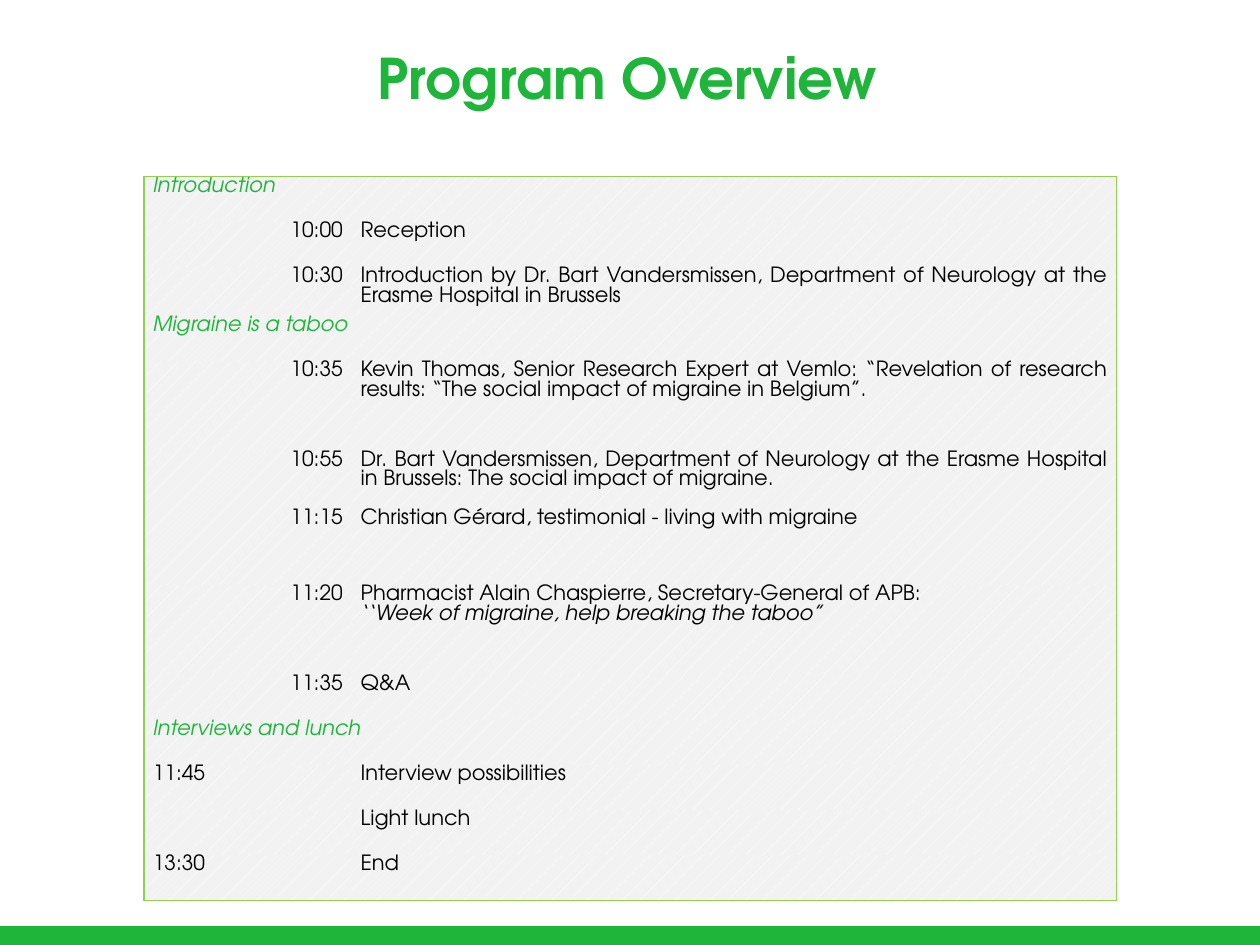
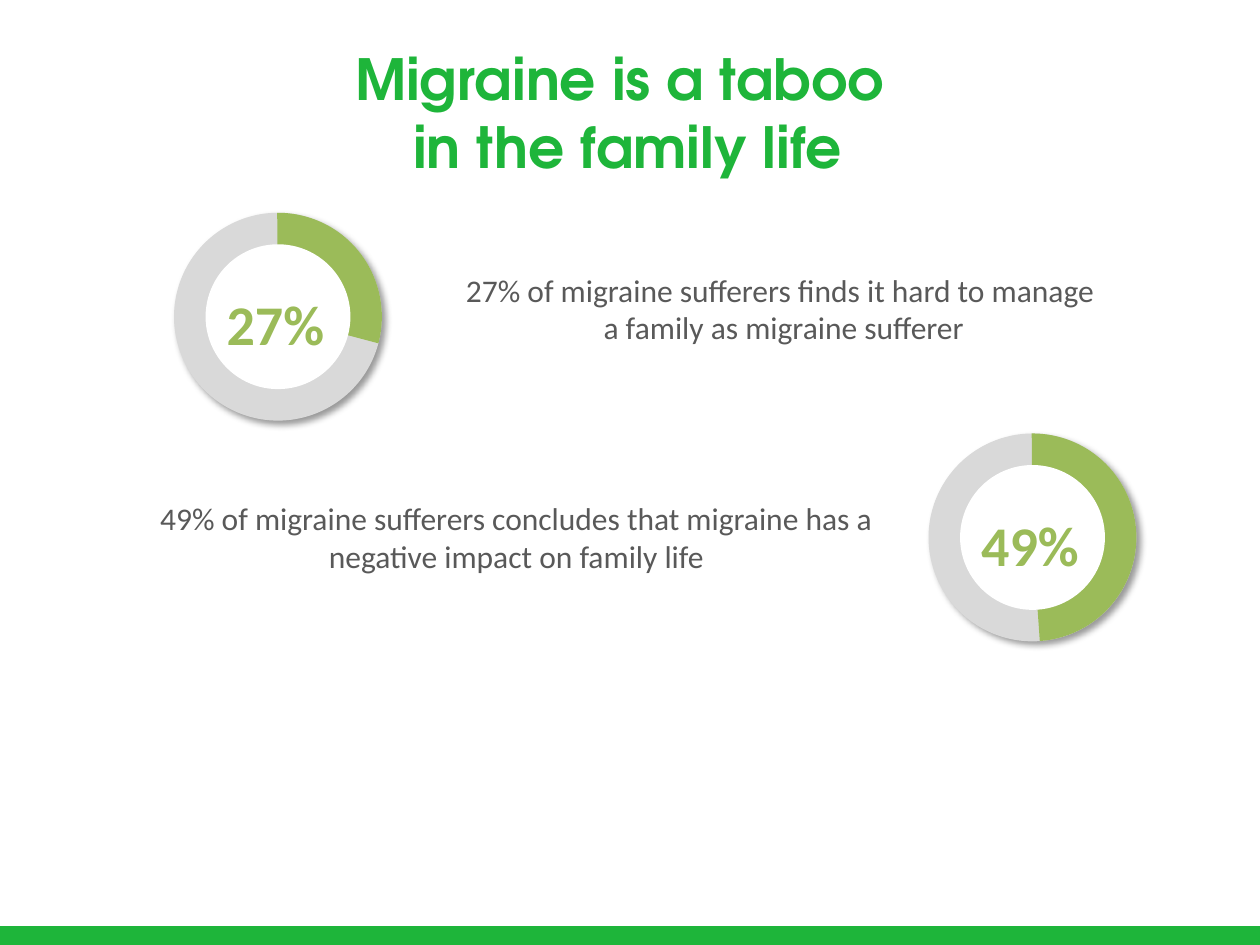
from lxml import etree
from pptx import Presentation
from pptx import util as u
from pptx.dml.color import RGBColor
from pptx.enum import dml, shapes, text
from pptx.oxml import ns
from pptx.util import Cm, Pt

COLORS = {
    "brand": "1EB53A", "border": "92D050", "cell": "F2F2F2", "white": "FFFFFF",
    "black": "000000", "ring": "D9D9D9", "share": "9BBB59", "caption": "595959",
}
HEADING_FONT = "TeX Gyre Adventor"
BODY_FONT = "Calibri"
SLIDE_SIZE = Cm(25.4), Cm(19.05)
CENTER, RIGHT, JUSTIFY = (text.PP_ALIGN.CENTER, text.PP_ALIGN.RIGHT,
                          text.PP_ALIGN.JUSTIFY)
LINE_HEIGHT = 11.2  # points, in the agenda
ROW_HEIGHT = 0.91   # centimetres, in the agenda

# Agenda rows: height, time entries, topic entries.
# An entry is (wording, blank lines before it, italic); a heading has no topics.
AGENDA = [
    (ROW_HEIGHT, "Introduction", None),
    (ROW_HEIGHT, [("10:00", 0, False)], [("Reception", 0, False)]),
    (0.99, [("10:30", 0, False)],
     [("Introduction by Dr. Bart Vandersmissen, Department of Neurology at the "
       "Erasme Hospital in Brussels", 0, False)]),
    (ROW_HEIGHT, "Migraine is a taboo", None),
    (1.8, [("10:35", 0, False)],
     [("Kevin Thomas, Senior Research Expert at Vemlo: “Revelation of research "
       "results: “The social impact of migraine in Belgium”.", 0, False)]),
    (2.72, [("10:55", 0, False), ("11:15", 2, False)],
     [("Dr. Bart Vandersmissen, Department of Neurology at the Erasme Hospital "
       "in Brussels: The social impact of migraine.", 0, False),
      ("Christian Gérard, testimonial - living with migraine", 1, False)]),
    (1.8, [("11:20", 0, False)],
     [("Pharmacist Alain Chaspierre, Secretary-General of APB:", 0, False),
      ("‘‘Week of migraine, help breaking the taboo”", 0, True)]),
    (ROW_HEIGHT, [("11:35", 0, False)], [("Q&A", 0, False)]),
    (ROW_HEIGHT, "Interviews and lunch", None),
    (ROW_HEIGHT, [("11:45", 0, False)], [("Interview possibilities", 0, False)]),
    (ROW_HEIGHT, [], [("Light lunch", 0, False)]),
    (ROW_HEIGHT, [("13:30", 0, False)], [("End", 0, False)]),
]
FIRST_LEFT_ALIGNED_ROW = 9


def rgb(name):
    return RGBColor.from_string(COLORS[name])


def add_xml(parent, tag, **attributes):
    return etree.SubElement(parent, ns.qn(tag), attributes)


def style_run(run, font_name, size, color, bold=False, italic=False):
    font = run.font
    font.name, font.size = font_name, Pt(size)
    font.bold, font.italic = bold, italic
    font.color.rgb = rgb(color)


def add_text(slide, box, wording, font_name, size, color, bold=False):
    shape = slide.shapes.add_textbox(*map(Cm, box))
    frame = shape.text_frame
    frame.word_wrap = True
    frame.text = wording
    paragraph = frame.paragraphs[0]
    paragraph.alignment = CENTER
    for run in paragraph.runs:
        style_run(run, font_name, size, color, bold)
    return frame


def add_filled(slide, kind, box, color):
    shape = slide.shapes.add_shape(kind, *map(Cm, box))
    shape.shadow.inherit = False
    shape.fill.solid()
    shape.fill.fore_color.rgb = rgb(color)
    shape.line.fill.background()
    return shape


# Shared frame: footer band and title
def add_framed_slide(presentation, title, title_size):
    slide = presentation.slides.add_slide(presentation.slide_layouts[6])
    add_filled(slide, shapes.MSO_SHAPE.RECTANGLE, (0, 18.67, 25.4, 0.38), "brand")
    add_text(slide, (3.61, 0.76, 18.08, 3.18), title,
             HEADING_FONT, title_size, "brand", bold=True)
    return slide


# Agenda table
def set_borders(cell, outer_edges):
    properties = cell._tc.get_or_add_tcPr()
    for edge in "LRTB":
        line = add_xml(properties, f"a:ln{edge}", w=str(u.Pt(1)))
        if edge in outer_edges:
            fill = add_xml(line, "a:solidFill")
            add_xml(fill, "a:srgbClr", val=COLORS["border"])
        else:
            add_xml(line, "a:noFill")


def fill_cell(cell, entries, alignment, color="black"):
    cell.margin_left = cell.margin_right = Cm(0.18)
    cell.margin_top = cell.margin_bottom = 0
    cell.fill.patterned()
    cell.fill.pattern = dml.MSO_PATTERN.PERCENT_5
    cell.fill.fore_color.rgb = rgb("white")
    cell.fill.back_color.rgb = rgb("cell")
    frame = cell.text_frame
    for index, (wording, blank_lines, italic) in enumerate(entries):
        paragraph = frame.add_paragraph() if index else frame.paragraphs[0]
        paragraph.text = wording
        paragraph.alignment = alignment
        paragraph.line_spacing = Pt(LINE_HEIGHT)
        if blank_lines:
            paragraph.space_before = Pt(blank_lines * LINE_HEIGHT)
        style_run(paragraph.runs[0], HEADING_FONT, 12, color, italic=italic)


def add_agenda(slide, left, top, column_widths):
    height = sum(row[0] for row in AGENDA)
    table = slide.shapes.add_table(
        len(AGENDA), 2, Cm(left), Cm(top),
        Cm(sum(column_widths)), Cm(height)).table
    table.first_row = table.horz_banding = False
    for column, width in zip(table.columns, column_widths):
        column.width = Cm(width)

    for index, (row_height, times, topics) in enumerate(AGENDA):
        table.rows[index].height = Cm(row_height)
        time_cell, topic_cell = table.cell(index, 0), table.cell(index, 1)
        is_heading = topics is None
        edges = "T" * (index == 0) + "B" * (index == len(AGENDA) - 1)
        set_borders(time_cell, edges + ("LR" if is_heading else "L"))
        set_borders(topic_cell, edges + "R")
        if is_heading:
            time_cell.merge(topic_cell)
            fill_cell(time_cell, [(times, 0, True)], JUSTIFY, "brand")
            continue
        time_alignment = RIGHT if index < FIRST_LEFT_ALIGNED_ROW else JUSTIFY
        fill_cell(time_cell, times, time_alignment)
        fill_cell(topic_cell, topics, JUSTIFY)


# Ring gauge with its percentage in the middle
def add_ring_shadow(shape):
    effects = shape._element.spPr.find(ns.qn("a:effectLst"))
    shadow = add_xml(effects, "a:outerShdw", blurRad=str(Pt(4)), dist=str(Pt(3)),
                     dir=str(45 * 60000), algn="tl", rotWithShape="0")
    color = add_xml(shadow, "a:srgbClr", val=COLORS["black"])
    add_xml(color, "a:alpha", val="40000")


def add_gauge(slide, left, top, percentage, end_angle):
    size, thickness, hole_inset = 4.19, 0.172, 0.635
    box = left, top, size, size
    ring = add_filled(slide, shapes.MSO_SHAPE.DONUT, box, "ring")
    ring.adjustments[0] = thickness
    add_ring_shadow(ring)

    arc = add_filled(slide, shapes.MSO_SHAPE.BLOCK_ARC, box, "share")
    # Angles are stored in 60000ths of a degree, adjustments in 100000ths
    for index, angle in enumerate((end_angle, 270.41)):
        arc.adjustments[index] = angle * 0.6
    arc.adjustments[2] = thickness
    for shape in (ring, arc):
        shape._element.spPr.xfrm.set("flipH", "1")

    hole_size = size - 2 * hole_inset
    add_filled(slide, shapes.MSO_SHAPE.OVAL,
               (left + hole_inset, top + hole_inset, hole_size, hole_size), "white")
    frame = add_text(slide, (left + 0.79, top + 1.45, 2.51, 1.35), percentage,
                     BODY_FONT, 32, "share", bold=True)
    frame.margin_left = frame.margin_right = frame.margin_bottom = 0
    frame.margin_top = Cm(0.1)


def add_caption(slide, left, top, wording):
    frame = add_text(slide, (left, top, 16.2, 1.8), wording,
                     BODY_FONT, 18, "caption")
    frame.auto_size = text.MSO_AUTO_SIZE.SHAPE_TO_FIT_TEXT


def build_program_slide(presentation):
    slide = add_framed_slide(presentation, "Program Overview", 32)
    add_agenda(slide, 2.9, 3.56, (4.19, 15.42))


def build_family_slide(presentation):
    slide = add_framed_slide(
        presentation, "Migraine is a taboo \vin the family life", 32.4)
    add_gauge(slide, 3.51, 4.29, "27%", 165.14)
    add_caption(slide, 7.7, 5.33, "27% of migraine sufferers finds it hard to manage "
                "\va family as migraine sufferer")
    add_gauge(slide, 18.72, 8.74, "49%", 94.05)
    add_caption(slide, 2.31, 9.93, "49% of migraine sufferers concludes that migraine "
                "has a negative impact on family life")


def main():
    presentation = Presentation()
    presentation.slide_width, presentation.slide_height = SLIDE_SIZE
    build_program_slide(presentation)
    build_family_slide(presentation)
    presentation.save("out.pptx")


if __name__ == "__main__":
    main()
